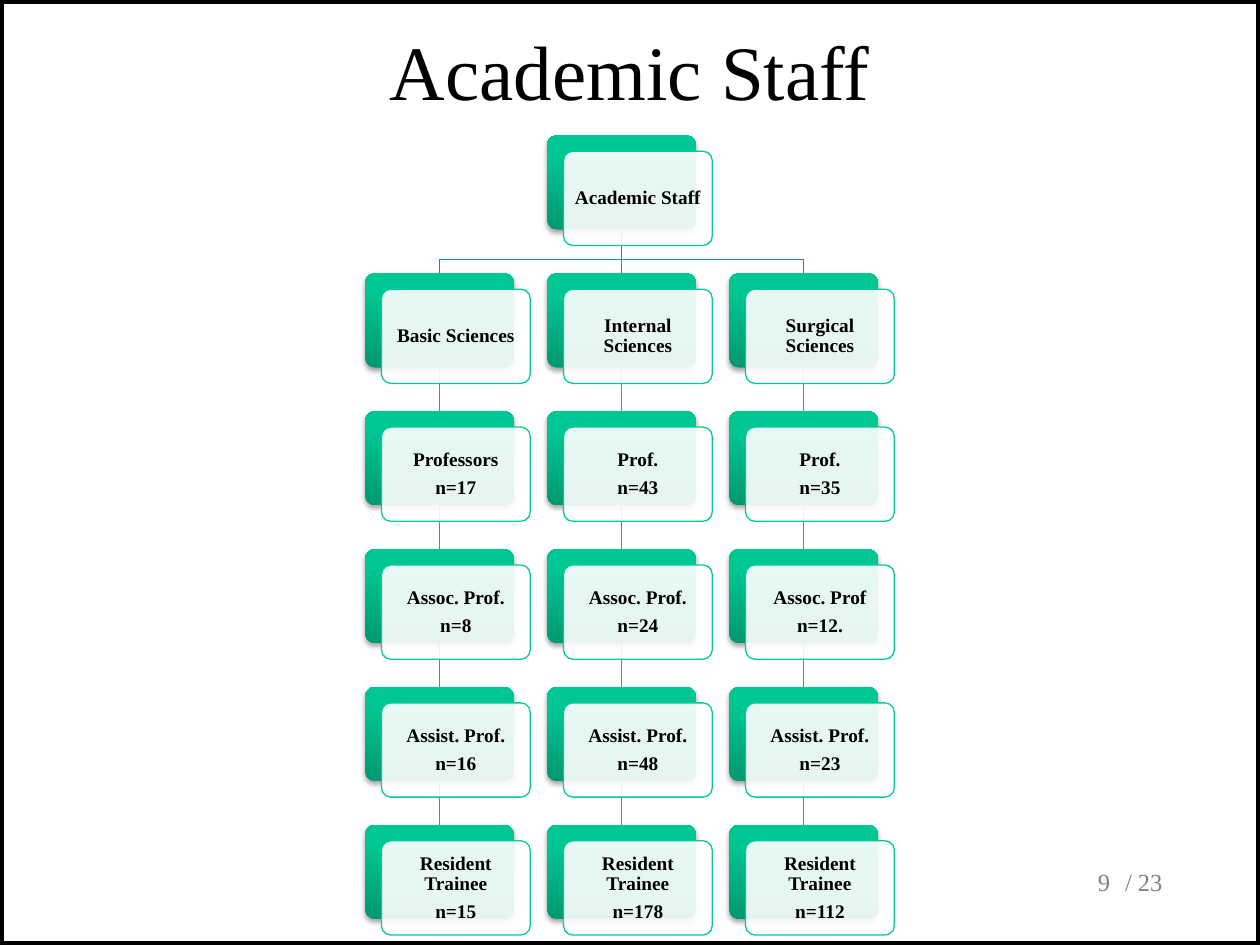
from dataclasses import dataclass

from lxml import etree
from pptx import Presentation
from pptx.dml.color import RGBColor
from pptx.enum.shapes import MSO_CONNECTOR, MSO_SHAPE
from pptx.enum.text import MSO_ANCHOR, PP_ALIGN
from pptx.oxml.ns import qn
from pptx.util import Cm, Pt

LEFT, CENTER, RIGHT = PP_ALIGN.LEFT, PP_ALIGN.CENTER, PP_ALIGN.RIGHT
TOP, MIDDLE = MSO_ANCHOR.TOP, MSO_ANCHOR.MIDDLE
RECT, ROUNDED = MSO_SHAPE.RECTANGLE, MSO_SHAPE.ROUNDED_RECTANGLE
STRAIGHT = MSO_CONNECTOR.STRAIGHT

# Chart grid, in cm
GRID_X, GRID_Y = 7.36, 2.73
STEP_X, STEP_Y = 3.67, 2.78
CARD_W, CARD_H = 3.0, 1.9
SHIFT_X, SHIFT_Y = 0.33, 0.32
INSET = 0.06
BUS_Y = 5.23

FONT = "Times New Roman"
BLACK, WHITE, GREY = "000000", "FFFFFF", "808080"
OUTLINE, TOP_LINK, LINK = "00CC99", "00A37B", "00B98B"
GRADIENT = [(0, "009872"), (80, "00C694"), (100, "00C795")]


@dataclass
class Node:
    col: int
    row: int
    lines: list[str]

    @property
    def x(self) -> float:
        return GRID_X + self.col * STEP_X

    @property
    def y(self) -> float:
        return GRID_Y + self.row * STEP_Y

    @property
    def mid(self) -> float:
        return self.x + CARD_W / 2

    @property
    def bottom(self) -> float:
        return self.y + CARD_H


@dataclass
class Label:
    box: tuple[float, float, float, float]
    lines: list[str]
    size: float
    color: str = BLACK
    align: PP_ALIGN = LEFT
    anchor: MSO_ANCHOR = TOP
    bold: bool = False
    insets: tuple[float, float] = (0.25, 0.13)
    spacing: float = 1.0
    after: float = 0


ROOT = Node(1, 0, ["Academic Staff"])
COLUMNS = [
    [["Basic Sciences"], ["Professors", "n=17"], ["Assoc. Prof.", "n=8"],
     ["Assist. Prof.", "n=16"], ["Resident Trainee", "n=15"]],
    [["Internal Sciences"], ["Prof.", "n=43"], ["Assoc. Prof.", "n=24"],
     ["Assist. Prof.", "n=48"], ["Resident Trainee", "n=178"]],
    [["Surgical Sciences"], ["Prof.", "n=35"], ["Assoc. Prof", "n=12."],
     ["Assist. Prof.", "n=23"], ["Resident Trainee", "n=112"]],
]


def rgb(color: str) -> RGBColor:
    return RGBColor.from_string(color)


def set_all(obj, formats: dict) -> None:
    for name, value in formats.items():
        setattr(obj, name, value)


def set_line(sp, color: str, width: float) -> None:
    sp.line.color.rgb = rgb(color)
    sp.line.width = Pt(width)


def add_label(s, label: Label) -> None:
    tf = s.shapes.add_textbox(*map(Cm, label.box)).text_frame
    side, edge = map(Cm, label.insets)
    set_all(tf, dict(word_wrap=True, vertical_anchor=label.anchor,
                     margin_left=side, margin_right=side,
                     margin_top=edge, margin_bottom=edge))
    for i, line in enumerate(label.lines):
        p = tf.add_paragraph() if i else tf.paragraphs[0]
        set_all(p, dict(alignment=label.align, line_spacing=label.spacing,
                        space_after=Pt(label.after)))
        r = p.add_run()
        r.text = line
        set_all(r.font, dict(name=FONT, size=Pt(label.size), bold=label.bold))
        r.font.color.rgb = rgb(label.color)


def add_card(s, x: float, y: float):
    sp = s.shapes.add_shape(ROUNDED, Cm(x), Cm(y), Cm(CARD_W), Cm(CARD_H))
    sp.adjustments[0] = 0.1
    sp.shadow.inherit = False
    return sp


def add_color(parent, color: str, alpha: int | None = None) -> None:
    clr = etree.SubElement(parent, qn("a:srgbClr"), val=color)
    if alpha is not None:
        etree.SubElement(clr, qn("a:alpha"), val=str(alpha * 1000))


def add_node(s, node: Node) -> None:
    # Green card behind, with gradient and soft shadow
    back = add_card(s, node.x, node.y)
    back.line.fill.background()
    back.fill.gradient()
    back.fill.gradient_angle = 90
    stops = back.element.spPr.find(".//" + qn("a:gsLst"))
    stops.clear()
    for pos, color in GRADIENT:
        add_color(etree.SubElement(stops, qn("a:gs"), pos=str(pos * 1000)), color)
    effects = back.element.spPr.find(qn("a:effectLst"))
    shadow = etree.SubElement(effects, qn("a:outerShdw"), blurRad=str(Pt(3.1)),
                              dist=str(Pt(1.8)), dir="5400000", rotWithShape="0")
    add_color(shadow, BLACK, 35)

    # Translucent white card in front
    x, y = node.x + SHIFT_X, node.y + SHIFT_Y
    front = add_card(s, x, y)
    front.fill.solid()
    front.fill.fore_color.rgb = rgb(WHITE)
    clr = front.element.spPr.find(qn("a:solidFill"))[0]
    etree.SubElement(clr, qn("a:alpha"), val="90000")
    set_line(front, OUTLINE, 0.75)

    box = (x + INSET, y + INSET, CARD_W - 2 * INSET, CARD_H - 2 * INSET)
    add_label(s, Label(box, node.lines, 11, align=CENTER, anchor=MIDDLE, bold=True,
                       insets=(0.12, 0.12), spacing=0.9, after=3.85))


def add_link(s, parent: Node, child: Node) -> None:
    color = TOP_LINK if parent is ROOT else LINK
    start, end = (parent.mid, parent.bottom), (child.mid, child.y)
    if parent.col == child.col:
        link = s.shapes.add_connector(STRAIGHT, *map(Cm, start + end))
        etree.SubElement(link.element.spPr, qn("a:effectLst"))
    else:
        points = [(parent.mid, BUS_Y), (child.mid, BUS_Y), end]
        fb = s.shapes.build_freeform(*map(Cm, start))
        fb.add_line_segments([(Cm(x), Cm(y)) for x, y in points], close=False)
        link = fb.convert_to_shape()
        link.fill.background()
        link.shadow.inherit = False
    set_line(link, color, 0.75)


def main() -> None:
    prs = Presentation()
    prs.slide_width, prs.slide_height = Cm(25.4), Cm(19.05)
    s = prs.slides.add_slide(prs.slide_layouts[6])

    # Slide frame
    frame = s.shapes.add_shape(RECT, 0, 0, prs.slide_width, prs.slide_height)
    frame.fill.background()
    frame.shadow.inherit = False
    set_line(frame, BLACK, 4.5)

    # Title and page number
    for label in (
        Label((1.27, 0.13, 22.86, 3.18), ["Academic Staff"], 44, align=CENTER,
              insets=(0.25, 0.34)),
        Label((22.43, 17.35, 2.97, 1.27), ["/ 23"], 14, GREY),
        Label((17.35, 17.35, 5.28, 1.27), ["9"], 14, GREY, RIGHT),
    ):
        add_label(s, label)

    # Links first, so the cards cover them
    branches = [[Node(col, row, lines) for row, lines in enumerate(column, 1)]
                for col, column in enumerate(COLUMNS)]
    for branch in branches:
        for parent, child in zip([ROOT] + branch, branch):
            add_link(s, parent, child)

    # Cards
    for node in [ROOT] + sum(branches, []):
        add_node(s, node)

    prs.save("out.pptx")


if __name__ == "__main__":
    main()
